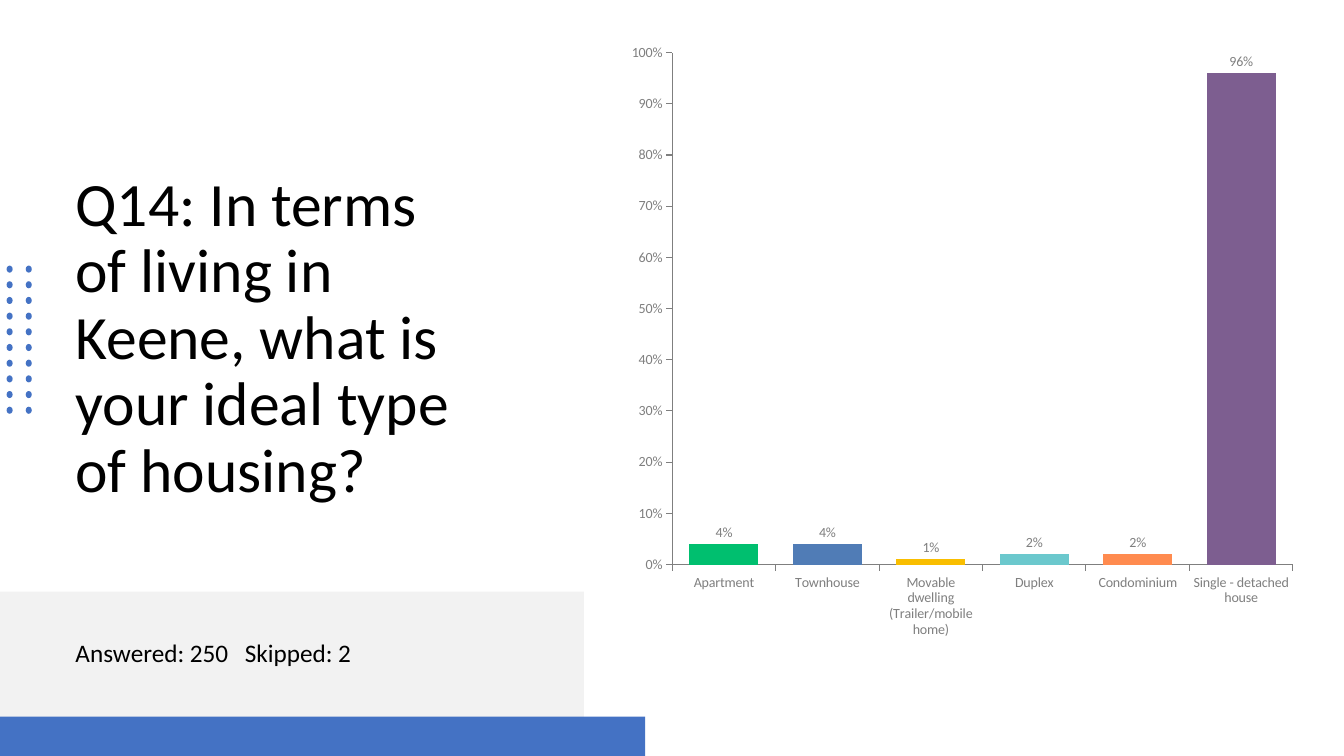
from lxml.etree import SubElement
from pptx import Presentation
from pptx.chart.data import CategoryChartData
from pptx.dml.color import RGBColor
from pptx.enum.chart import XL_CHART_TYPE, XL_LABEL_POSITION, XL_TICK_LABEL_POSITION, XL_TICK_MARK
from pptx.enum.shapes import MSO_SHAPE
from pptx.enum.text import MSO_ANCHOR
from pptx.oxml import parse_xml
from pptx.oxml.ns import nsdecls, qn
from pptx.util import Inches, Pt

# Content
QUESTION = "Q14: In terms of living in Keene, what is your ideal type of housing?"
RESPONSES = "Answered: 250\tSkipped: 2"
FONT = "Calibri"
BLACK = RGBColor(0x00, 0x00, 0x00)
BLUE = RGBColor(0x44, 0x72, 0xC4)
PALE_GRAY = RGBColor(0xF2, 0xF2, 0xF2)
GRAY = RGBColor(0x7F, 0x7F, 0x7F)
HOUSING = [
    ("Apartment", 0.04, RGBColor(0x00, 0xBF, 0x6F)),
    ("Townhouse", 0.04, RGBColor(0x50, 0x7C, 0xB6)),
    ("Movable dwelling (Trailer/mobile home)", 0.01, RGBColor(0xF9, 0xBE, 0x00)),
    ("Duplex", 0.02, RGBColor(0x6B, 0xC8, 0xCD)),
    ("Condominium", 0.02, RGBColor(0xFF, 0x8B, 0x4F)),
    ("Single - detached house", 0.96, RGBColor(0x7D, 0x5E, 0x90)),
]
PLOT_AREA = {"x": 0.08, "y": 0.02, "w": 0.9, "h": 0.83}  # fractions of the chart

# Dot grid
DOT_COLUMNS, DOT_ROWS = 2, 10
DOT_LEFT, DOT_TOP = 0.06, 2.64
DOT_COLUMN_STEP, DOT_LAST_TOP = 0.19, 4.04
DOT_WIDTH, DOT_HEIGHT = 0.07, 0.06


def add_filled_shape(shapes, kind, box, color):
    shape = shapes.add_shape(kind, *(Inches(length) for length in box))
    shape.shadow.inherit = False
    shape.fill.solid()
    shape.fill.fore_color.rgb = color
    shape.line.fill.background()
    return shape


def add_text(shapes, box, text, size, space_before=0):
    frame = shapes.add_textbox(*(Inches(length) for length in box)).text_frame
    frame.word_wrap = True
    frame.vertical_anchor = MSO_ANCHOR.MIDDLE
    paragraph = frame.paragraphs[0]
    paragraph.line_spacing = 0.9
    paragraph.space_before = Pt(space_before)
    run = paragraph.add_run()
    run.text = text
    run.font.name = FONT
    run.font.size = Pt(size)
    run.font.color.rgb = BLACK
    return paragraph


def style_small_text(font):
    font.name = FONT
    font.size = Pt(10)
    font.color.rgb = GRAY


def style_axis(axis):
    axis.has_major_gridlines = False
    axis.major_tick_mark = XL_TICK_MARK.OUTSIDE
    axis.minor_tick_mark = XL_TICK_MARK.NONE
    axis.format.line.color.rgb = GRAY
    axis.format.line.width = Pt(0.75)
    style_small_text(axis.tick_labels.font)


def add_housing_chart(shapes, box):
    data = CategoryChartData(number_format="0%")
    data.categories = [name for name, _, _ in HOUSING]
    data.add_series("Series 1", [share for _, share, _ in HOUSING])
    lengths = [Inches(length) for length in box]
    chart = shapes.add_chart(XL_CHART_TYPE.COLUMN_CLUSTERED, *lengths, data).chart
    chart.has_legend = False
    chart.has_title = False
    chart.font.name = FONT
    chart.font.size = Pt(18)
    chart.font.color.rgb = BLACK

    # Axes
    style_axis(chart.category_axis)
    chart.category_axis.tick_label_position = XL_TICK_LABEL_POSITION.LOW
    value_axis = chart.value_axis
    style_axis(value_axis)
    value_axis.minimum_scale, value_axis.maximum_scale = 0, 1
    value_axis.major_unit = 0.1
    value_axis.tick_labels.number_format = "0%"
    value_axis.tick_labels.number_format_is_linked = False

    # Columns and labels
    plot = chart.plots[0]
    plot.gap_width = 50
    plot.overlap = 100
    plot.vary_by_categories = False
    series = plot.series[0]
    series.format.fill.solid()
    series.format.fill.fore_color.rgb = HOUSING[0][2]
    for index, (_, _, color) in enumerate(HOUSING):
        fill = series.points[index].format.fill
        fill.solid()
        fill.fore_color.rgb = color
    labels = series.data_labels
    labels.show_value = True
    labels.number_format = "0%"
    labels.number_format_is_linked = False
    labels.position = XL_LABEL_POSITION.OUTSIDE_END
    style_small_text(labels.font)

    # Fixed inner plot area
    plot_area = chart.element.find(".//" + qn("c:plotArea"))
    for layout in plot_area.findall(qn("c:layout")):
        plot_area.remove(layout)
    modes = "".join(f'<c:{key}Mode val="edge"/>' for key in "xy")
    sizes = "".join(f'<c:{key} val="{value}"/>' for key, value in PLOT_AREA.items())
    plot_area.insert(0, parse_xml(
        f'<c:layout {nsdecls("c")}><c:manualLayout><c:layoutTarget val="inner"/>'
        f"{modes}{sizes}</c:manualLayout></c:layout>"))


def main():
    presentation = Presentation()
    presentation.slide_width = Inches(13.33)
    presentation.slide_height = Inches(7.5)
    slide = presentation.slides.add_slide(presentation.slide_layouts[6])
    shapes = slide.shapes

    # Question
    add_text(shapes, (0.65, 1.61, 4.08, 3.51), QUESTION, 44)

    # Dots at the left edge
    dots = shapes.add_group_shape()
    row_step = (DOT_LAST_TOP - DOT_TOP) / (DOT_ROWS - 1)
    for row in range(DOT_ROWS):
        for column in range(DOT_COLUMNS):
            box = (DOT_LEFT + column * DOT_COLUMN_STEP, DOT_TOP + row * row_step,
                   DOT_WIDTH, DOT_HEIGHT)
            dot = add_filled_shape(dots.shapes, MSO_SHAPE.OVAL, box, BLUE)
            dot.rotation = 90

    # Response counts on the bottom bands
    add_filled_shape(shapes, MSO_SHAPE.RECTANGLE, (0, 5.87, 5.79, 1.63), PALE_GRAY)
    counts = add_text(shapes, (0.65, 6.06, 4.79, 0.87), RESPONSES, 18, space_before=10)
    tab_stops = SubElement(counts._p.get_or_add_pPr(), qn("a:tabLst"))
    SubElement(tab_stops, qn("a:tab"), pos=str(Inches(1.68)), algn="l")
    add_filled_shape(shapes, MSO_SHAPE.RECTANGLE, (0, 7.11, 6.4, 0.39), BLUE)

    # Chart
    add_housing_chart(shapes, (6.12, 0.4, 6.84, 6.12))
    presentation.save("out.pptx")


if __name__ == "__main__":
    main()
